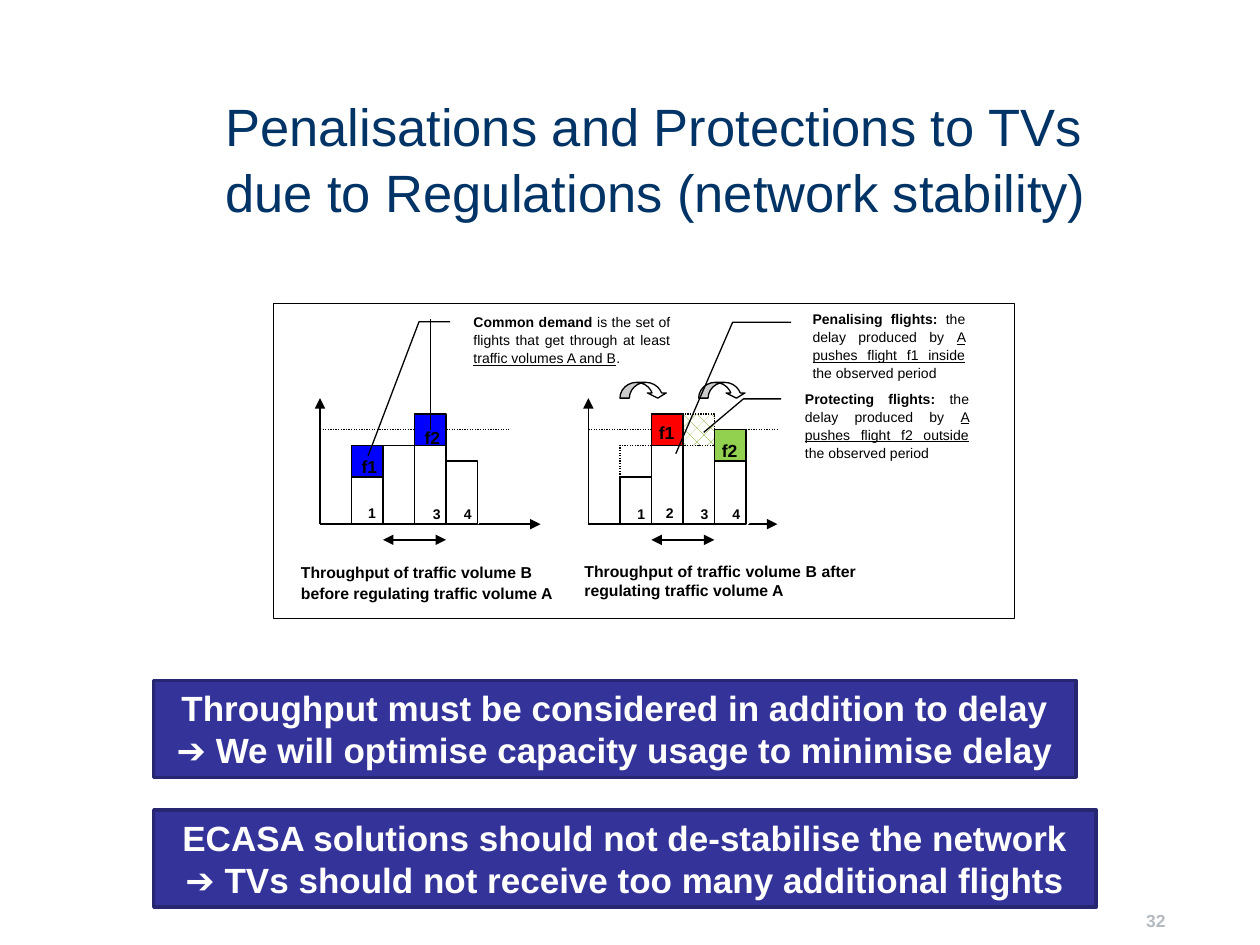
from dataclasses import dataclass, field
from typing import NamedTuple, Optional

from lxml.etree import SubElement
from pptx import Presentation
from pptx.dml.color import RGBColor
from pptx.enum.dml import MSO_LINE_DASH_STYLE as Dash, MSO_PATTERN_TYPE as Pattern
from pptx.enum.shapes import MSO_CONNECTOR, MSO_SHAPE as Shape
from pptx.enum.text import MSO_ANCHOR as Anchor, PP_ALIGN as Align
from pptx.oxml.ns import qn
from pptx.util import Inches, Pt

COLORS = {
    "title": "003366", "number": "B4BAC0", "ink": "000000", "paper": "FFFFFF",
    "before": "0000FF", "penalised": "FF0000", "protected": "92D050",
    "hatch": "669900", "banner": "333399", "banner_edge": "262671",
}
UNIT = 0.1              # page grid: 100 columns by 75 rows
COL, ROW = 0.25, 0.125  # chart grid
BASELINE = 4.16
BODY = {"size": Pt(8), "bold": True}
PARA = {"line_spacing": 1.07, "space_after": Pt(8)}


class Box(NamedTuple):
    """Left, top, width and height on the page grid."""
    col: float
    row: float
    cols: float
    rows: float


class Bar(NamedTuple):
    rows: int
    label: str = ""
    label_width: float = 0
    label_height: float = 0


class Block(NamedTuple):
    """One flight, two rows high; row is its lower edge."""
    col: int
    row: int
    fill: Optional[str] = None
    dotted: bool = False
    hatched: bool = False


class Callout(NamedTuple):
    box: Box
    adjustments: tuple
    runs: tuple  # bold, plain, underlined, plain


@dataclass
class Chart:
    left: float
    axis_cols: int
    bars: list
    blocks: list
    caption: str
    caption_box: Box
    caption_align: Align
    flights: list  # text and position
    arrows: list = field(default_factory=list)

    def x(self, col: float) -> float:
        return self.left + col * COL

    def y(self, row: float) -> float:
        return BASELINE - row * ROW


def rgb(name: str) -> RGBColor:
    return RGBColor.from_string(COLORS[name])


def apply(target, values: dict) -> None:
    for name, value in values.items():
        setattr(target, name, value)


def add_shape(shapes, kind, x, y, w, h, fill=None, line=None, width=0.75, dotted=False):
    s = shapes.add_shape(kind, Inches(x), Inches(y), Inches(w), Inches(h))
    s.shadow.inherit = False
    if fill:
        s.fill.solid()
        s.fill.fore_color.rgb = rgb(fill)
    else:
        s.fill.background()
    if line:
        s.line.color.rgb = rgb(line)
        s.line.width = Pt(width)
        if dotted:
            s.line.dash_style = Dash.ROUND_DOT
    else:
        s.line.fill.background()
    return s


def on_grid(box: Box) -> tuple:
    return tuple(round(v * UNIT, 3) for v in box)


def write(s, runs, color="ink", align=Align.LEFT, anchor=Anchor.TOP, para=PARA) -> None:
    tf = s.text_frame
    apply(tf, {"word_wrap": True, "vertical_anchor": anchor})
    p = tf.paragraphs[0]
    apply(p, {"alignment": align, **para})
    for i, (text, font) in enumerate(runs):
        for j, part in enumerate(text.split("\n")):
            if j:
                p.add_line_break()
            r = p.add_run()
            r.text = part
            apply(r.font, {"name": "Arial", **font})
            r.font.color.rgb = rgb(color)


def add_line(shapes, x1, y1, x2, y2, ends=(), dotted=False) -> None:
    c = shapes.add_connector(MSO_CONNECTOR.STRAIGHT, *map(Inches, (x1, y1, x2, y2)))
    c.line.color.rgb = rgb("ink")
    c.line.width = Pt(0.75)
    if dotted:
        c.line.dash_style = Dash.ROUND_DOT
    sp_pr = c._element.spPr
    for end in ends:
        SubElement(sp_pr.find(qn("a:ln")), qn(f"a:{end}")).set("type", "triangle")
    SubElement(sp_pr, qn("a:effectLst"))


def draw_chart(shapes, chart: Chart) -> None:
    x, y = chart.x, chart.y
    # Axes
    add_line(shapes, x(0), y(0), x(0), y(8), ["tailEnd"])
    add_line(shapes, x(0), y(0), x(chart.axis_cols), y(0), ["tailEnd"])
    # Numbered periods
    for col, bar in enumerate(chart.bars, 1):
        if bar.label:
            s = add_shape(shapes, Shape.OCTAGON, x(col), y(2), bar.label_width,
                          bar.label_height, "paper")
            write(s, [(bar.label, BODY)])
        add_shape(shapes, Shape.RECTANGLE, x(col), y(bar.rows), COL, bar.rows * ROW, line="ink")
    # Capacity limit
    add_line(shapes, x(0), y(6), x(6), y(6), dotted=True)
    for b in chart.blocks:
        s = add_shape(shapes, Shape.RECTANGLE, x(b.col), y(b.row + 2), COL, 2 * ROW,
                      b.fill, "ink", dotted=b.dotted)
        if b.hatched:
            s.fill.patterned()
            s.fill.pattern = Pattern.PERCENT_25
            s.fill.fore_color.rgb = rgb("hatch")
            s.fill.back_color.rgb = rgb("paper")
    for col in chart.arrows:
        s = add_shape(shapes, Shape.CURVED_DOWN_ARROW, x(col), y(9), 1.5 * COL, ROW, "paper", "ink")
        for i, value in enumerate((0.6, 1.2, 0.33)):
            s.adjustments[i] = value
    # Caption and observed period
    s = add_shape(shapes, Shape.RECTANGLE, *on_grid(chart.caption_box), "paper")
    captioned = PARA if chart.caption_align == Align.LEFT else {"space_after": Pt(5)}
    write(s, [(chart.caption, {"size": Pt(9), "bold": True})], align=chart.caption_align, para=captioned)
    add_line(shapes, x(2), y(-1), x(4), y(-1), ["headEnd", "tailEnd"])


def draw_callout(shapes, callout: Callout) -> None:
    s = add_shape(shapes, Shape.LINE_CALLOUT_2_NO_BORDER, *on_grid(callout.box), "paper", "ink")
    for i, value in enumerate(callout.adjustments):
        s.adjustments[i] = value
    styles = ({"bold": True}, {}, {"underline": True}, {})
    write(s, [(text, {"size": Pt(8), "bold": False, **style})
              for text, style in zip(callout.runs, styles)], align=Align.JUSTIFY)


CHARTS = [
    Chart(2.54, 7,
          [Bar(3, "1", 0.27, 0.3), Bar(5), Bar(6, "3", 0.32, 0.35), Bar(4, "4", 0.29, 0.3)],
          [Block(1, 3, "before"), Block(3, 5, "before")],
          "Throughput of traffic volume B before regulating traffic volume A",
          Box(22.9, 44.1, 23.5, 4.5), Align.LEFT,
          [("f1", 2.74, 3.53), ("f2", 3.24, 3.3)]),
    Chart(4.67, 6,
          [Bar(3, "1", 0.32, 0.28), Bar(5, "2", 0.25, 0.28), Bar(6, "3", 0.29, 0.32),
           Bar(4, "4", 0.3, 0.31)],
          [Block(1, 3, dotted=True), Block(3, 5, dotted=True, hatched=True),
           Block(2, 5, "penalised"), Block(4, 4, "protected")],
          "Throughput of traffic volume B after regulating traffic volume A",
          Box(45.4, 44.1, 23.5, 4.5), Align.JUSTIFY,
          [("f1", 5.1, 3.26), ("f2", 5.6, 3.4)], [1, 3.5]),
]
CALLOUTS = [
    Callout(Box(63.5, 24.1, 14.1, 7.4), (0.2, -0.05, 0.2, -0.38, 1.61, -0.7),
            ("Penalising flights: ", "the delay produced by ", "A pushes flight f1 inside",
             " the observed period")),
    Callout(Box(62.9, 30.4, 15, 7), (0.18, -0.06, 0.18, -0.26, 0.56, -0.47),
            ("Protecting flights: ", "the delay produced by ", "A pushes flight f2 outside ",
             "the observed period")),
    Callout(Box(36.6, 24.3, 17.6, 4.8), (0.26, -0.05, 0.26, -0.19, 2.48, -0.42),
            ("Common demand ", "is the set of flights that get through at least ",
             "traffic volumes A and B", ".")),
]
BANNERS = [
    (Box(12.2, 54, 73.2, 7.7), "Throughput must be considered in addition to delay\n"
     "➔ We will optimise capacity usage to minimise delay"),
    (Box(12.2, 64.3, 74.8, 7.7), "ECASA solutions should not de-stabilise the network\n"
     "➔ TVs should not receive too many additional flights"),
]


def main() -> None:
    prs = Presentation()
    prs.slide_width, prs.slide_height = Inches(10), Inches(7.5)
    shapes = prs.slides.add_slide(prs.slide_layouts[6]).shapes

    # Title and slide number
    s = shapes.add_textbox(*map(Inches, on_grid(Box(16.9, 6.7, 75.6, 12.5))))
    write(s, [("Penalisations and Protections to TVs due to Regulations (network stability)",
               {"size": Pt(30)})], "title", para={"line_spacing": 1.05})
    s = shapes.add_textbox(*map(Inches, on_grid(Box(71.7, 69.4, 20.8, 5))))
    s.text_frame.margin_right = 0
    write(s, [("32", {"size": Pt(10), "bold": True})], "number", Align.RIGHT, Anchor.BOTTOM, {})

    # Diagram
    diagram = shapes.add_group_shape().shapes
    add_shape(diagram, Shape.RECTANGLE, *on_grid(Box(21.7, 24.1, 58.8, 25)), line="ink")
    for chart in CHARTS:
        draw_chart(diagram, chart)
    for callout in CALLOUTS:
        draw_callout(diagram, callout)
    before = CHARTS[0]
    add_line(diagram, before.x(3.5), before.y(6), before.x(3.5), before.y(13))
    for chart in CHARTS:
        for text, x, y in chart.flights:
            s = add_shape(diagram, Shape.OCTAGON, x, y, 0.51, 0.21)
            write(s, [(text, {"size": Pt(10), "bold": True})])

    # Conclusions
    for box, text in BANNERS:
        s = add_shape(shapes, Shape.RECTANGLE, *on_grid(box), "banner", "banner_edge", 2)
        write(s, [(text, {"size": Pt(20), "bold": True})], "paper", Align.CENTER, para={})

    prs.save("out.pptx")


if __name__ == "__main__":
    main()
